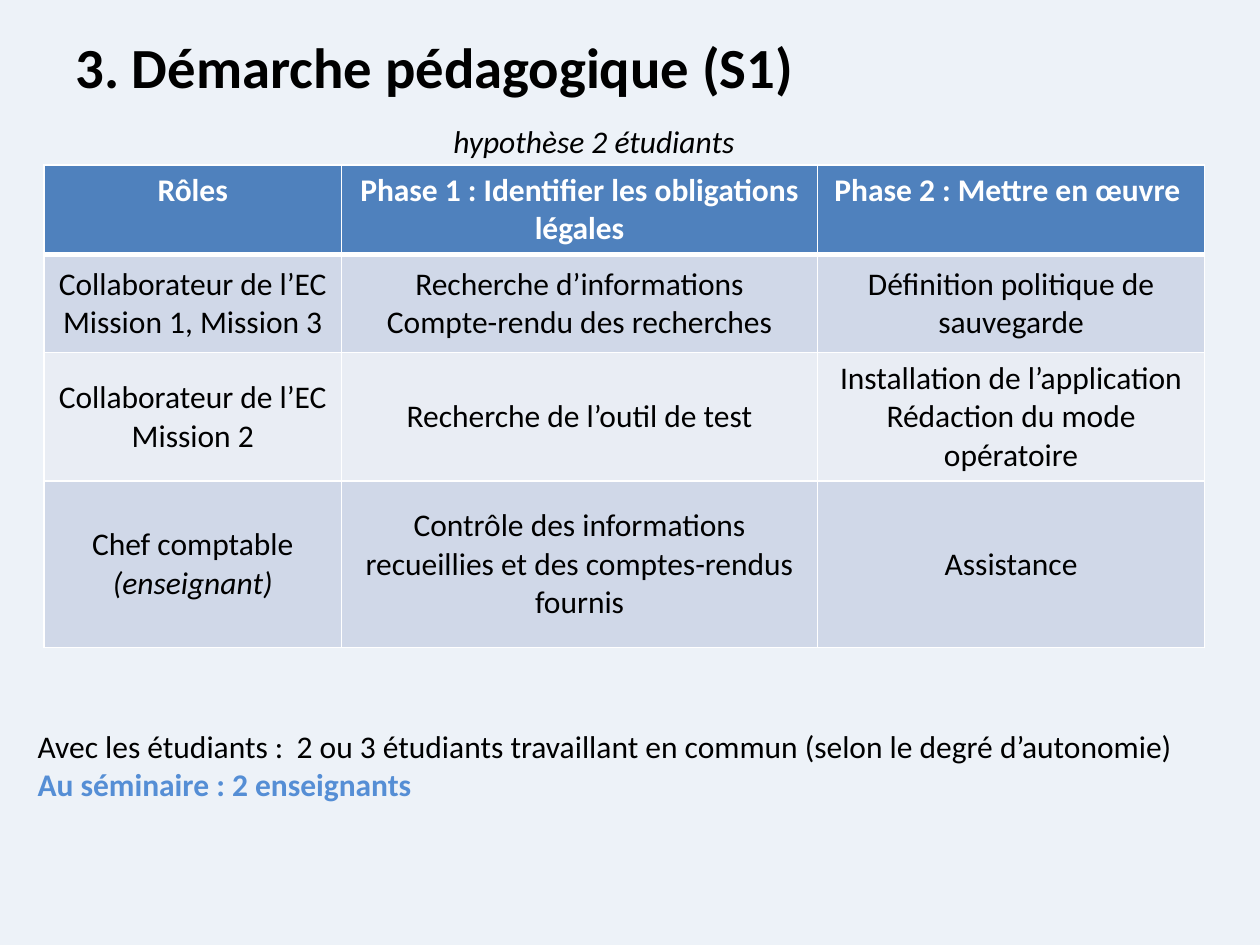
from lxml import etree
from pptx import Presentation
from pptx.dml.color import RGBColor
from pptx.enum import text
from pptx.oxml import ns
from pptx.util import Inches, Pt

BLACK, WHITE, HEADER_BLUE, ACCENT = "000000", "FFFFFF", "4F81BD", "558ED5"
BAND_DARK, BAND_LIGHT, BACKGROUND = "D0D8E8", "E9EDF4", "EDF2F8"

COLUMN_WIDTHS = [2.36, 3.78, 3.07]
ROW_HEIGHTS = [0.71, 0.78, 1.02, 1.32]
ROLES = [
    [["Rôles"], ["Phase 1 : Identifier les obligations légales"],
     ["Phase 2 : Mettre en œuvre "]],
    [["Collaborateur de l’EC", "Mission 1, Mission 3"],
     ["Recherche d’informations", "Compte-rendu des recherches"],
     ["Définition politique de sauvegarde"]],
    [["Collaborateur de l’EC", "Mission 2"],
     ["Recherche de l’outil de test"],
     ["Installation de l’application", "Rédaction du mode opératoire"]],
    [["Chef comptable", "(enseignant)"],
     ["Contrôle des informations recueillies et des comptes-rendus fournis"],
     ["Assistance"]],
]


def paint(fill, color):
    fill.solid()
    fill.fore_color.rgb = RGBColor.from_string(color)


def add_run(paragraph, wording, size=18, color=BLACK, bold=False, italic=False):
    run = paragraph.add_run()
    run.text = wording
    font = run.font
    font.name, font.size, font.bold, font.italic = "Calibri", Pt(size), bold, italic
    font.color.rgb = RGBColor.from_string(color)


def add_text(slide, left, top, width, height, lines, inset=0.05):
    frame = slide.shapes.add_textbox(
        Inches(left), Inches(top), Inches(width), Inches(height)).text_frame
    frame.word_wrap = True
    frame.margin_top = frame.margin_bottom = Inches(inset)
    for index, (wording, style) in enumerate(lines):
        paragraph = frame.add_paragraph() if index else frame.paragraphs[0]
        add_run(paragraph, wording, **style)


def add_borders(cell, bottom_width):
    properties = cell._tc.get_or_add_tcPr()
    for side, width in zip("LRTB", (1, 1, 1, bottom_width)):
        border = etree.SubElement(properties, ns.qn(f"a:ln{side}"), w=str(Pt(width)))
        fill = etree.SubElement(border, ns.qn("a:solidFill"))
        etree.SubElement(fill, ns.qn("a:srgbClr"), val=WHITE)


def fill_cell(cell, lines, is_header, band):
    add_borders(cell, 3 if is_header else 1)
    paint(cell.fill, band)
    cell.vertical_anchor = text.MSO_ANCHOR.TOP if is_header else text.MSO_ANCHOR.MIDDLE
    for index, line in enumerate(lines):
        frame = cell.text_frame
        paragraph = frame.add_paragraph() if index else frame.paragraphs[0]
        paragraph.alignment = text.PP_ALIGN.CENTER
        add_run(paragraph, line, color=WHITE if is_header else BLACK,
                bold=is_header, italic=line.startswith("("))


def add_roles_table(slide):
    table = slide.shapes.add_table(
        len(ROW_HEIGHTS), len(COLUMN_WIDTHS), Inches(0.35), Inches(1.31),
        Inches(sum(COLUMN_WIDTHS)), Inches(sum(ROW_HEIGHTS))).table
    for column, width in zip(table.columns, COLUMN_WIDTHS):
        column.width = Inches(width)
    bands = [HEADER_BLUE, BAND_DARK, BAND_LIGHT, BAND_DARK]
    for index, (row, height) in enumerate(zip(table.rows, ROW_HEIGHTS)):
        row.height = Inches(height)
        for cell, lines in zip(row.cells, ROLES[index]):
            fill_cell(cell, lines, index == 0, bands[index])


def main():
    deck = Presentation()
    deck.slide_width, deck.slide_height = Inches(10), Inches(7.5)
    slide = deck.slides.add_slide(deck.slide_layouts[6])
    paint(slide.background.fill, BACKGROUND)
    add_text(slide, 0.5, 0.25, 9, 0.6,
             [("3. Démarche pédagogique (S1)", {"size": 32.4, "bold": True})], inset=0)
    add_text(slide, 3.5, 0.97, 6, 0.31,
             [("hypothèse 2 étudiants", {"italic": True})], inset=0)
    add_roles_table(slide)
    add_text(slide, 0.2, 5.72, 9.53, 1.01, [
        ("Avec les étudiants :\t 2 ou 3 étudiants travaillant en commun "
         "(selon le degré d’autonomie)", {}),
        ("Au séminaire : 2 enseignants", {"color": ACCENT, "bold": True}),
    ])
    deck.save("out.pptx")


if __name__ == "__main__":
    main()
